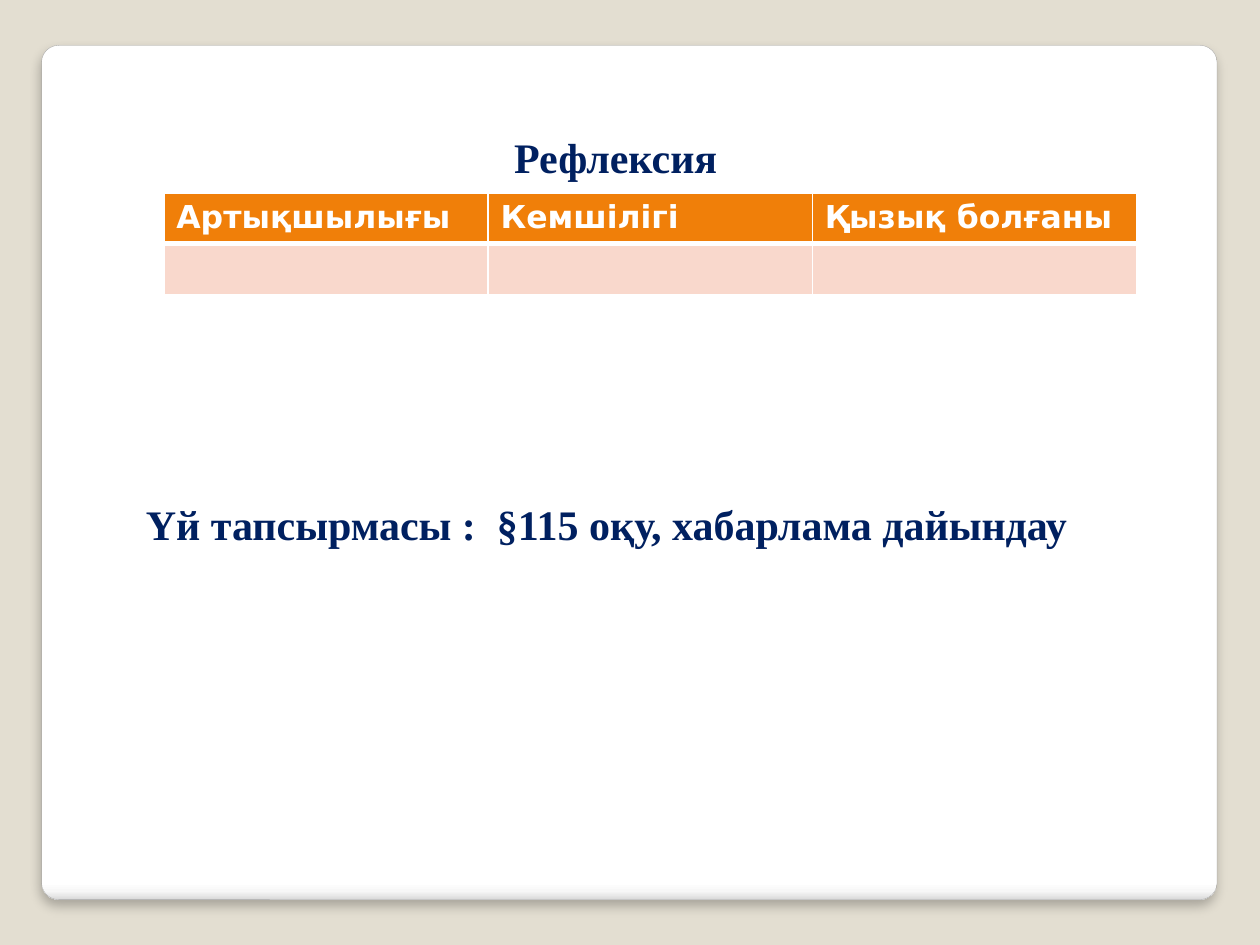
from lxml import etree
from pptx import Presentation
from pptx.dml.color import RGBColor
from pptx.enum import shapes, text
from pptx.oxml import parse_xml
from pptx.oxml.ns import nsdecls, qn
from pptx.util import Inches, Pt

# Content
TITLE = "Рефлексия"
HEADS = ["Артықшылығы", "Кемшілігі", "Қызық болғаны"]
TASK = "Үй тапсырмасы :  §115 оқу, хабарлама дайындау"

THEME = dict(
    back="E3DED1", edge="A4A4A4", ink="002060", white="FFFFFF",
    head="F07F09", body="F9D8CC", serif="Times New Roman",
    sans="DejaVu Sans", big=24, small=18,
)
STOPS = [(0, "FFFFFF"), (98, "FFFFFF"), (99, "F7F7F7"), (100, "DADADA")]


def rgb(name):
    return RGBColor.from_string(THEME[name])


def write(frame, words, font="serif", size="big", color="ink"):
    frame.word_wrap = True
    frame.vertical_anchor = text.MSO_ANCHOR.TOP
    para = frame.paragraphs[0]
    para.alignment = text.PP_ALIGN.LEFT
    run = para.add_run()
    run.text = words
    run.font.name = THEME[font]
    run.font.size = Pt(THEME[size])
    run.font.bold = True
    run.font.color.rgb = rgb(color)


def place(shape, left, top, width, height):
    shape.left, shape.top = Inches(left), Inches(top)
    shape.width, shape.height = Inches(width), Inches(height)


def border(cell, **sides):
    props = cell._tc.get_or_add_tcPr()
    for i, (side, width) in enumerate(sides.items()):
        line = etree.Element(qn("a:ln" + side), w=str(Pt(width)))
        fill = etree.SubElement(line, qn("a:solidFill"))
        etree.SubElement(fill, qn("a:srgbClr"), val=THEME["white"])
        props.insert(i, line)


def add_card(slide):
    card = slide.shapes.add_shape(
        shapes.MSO_SHAPE.ROUNDED_RECTANGLE,
        Inches(0.33), Inches(0.36), Inches(9.33), Inches(6.78))
    card.adjustments[0] = 0.02
    card.line.color.rgb = rgb("edge")
    card.line.width = Pt(0.16)
    stops = "".join(
        f'<a:gs pos="{pos * 1000}"><a:srgbClr val="{color}"/></a:gs>'
        for pos, color in STOPS)
    props = card._element.spPr
    props.find(qn("a:ln")).addprevious(parse_xml(
        f'<a:gradFill {nsdecls("a")}><a:gsLst>{stops}</a:gsLst>'
        '<a:lin ang="5400000" scaled="0"/></a:gradFill>'))
    props.append(parse_xml(
        f'<a:effectLst {nsdecls("a")}><a:outerShdw blurRad="{Pt(6)}" '
        f'dist="{Pt(4)}" dir="5400000" rotWithShape="0">'
        '<a:srgbClr val="000000"><a:alpha val="25000"/></a:srgbClr>'
        '</a:outerShdw></a:effectLst>'))
    # Behind the title
    slide.shapes._spTree.insert(2, card._element)


def add_grid(slide):
    grid = slide.shapes.add_table(
        2, len(HEADS), Inches(1.3), Inches(1.53),
        Inches(7.72), Inches(0.81)).table
    for col, words in enumerate(HEADS):
        top, low = grid.cell(0, col), grid.cell(1, col)
        write(top.text_frame, words, font="sans", size="small", color="white")
        for cell, fill in ((top, "head"), (low, "body")):
            cell.fill.solid()
            cell.fill.fore_color.rgb = rgb(fill)
        border(top, L=1, R=1, T=1, B=3)
        border(low, L=1, R=1, T=3, B=1)


def main():
    deck = Presentation()
    deck.slide_width, deck.slide_height = Inches(10), Inches(7.5)
    slide = deck.slides.add_slide(deck.slide_layouts[5])
    slide.background.fill.solid()
    slide.background.fill.fore_color.rgb = rgb("back")
    add_card(slide)

    # Title
    title = slide.shapes.title
    place(title, 3.98, 0.99, 1.92, 0.5)
    write(title.text_frame, TITLE)

    add_grid(slide)

    # Homework
    task = slide.shapes.add_textbox(0, 0, 0, 0)
    place(task, 1.06, 3.91, 7.67, 0.5)
    write(task.text_frame, TASK)
    deck.save("out.pptx")


if __name__ == "__main__":
    main()
